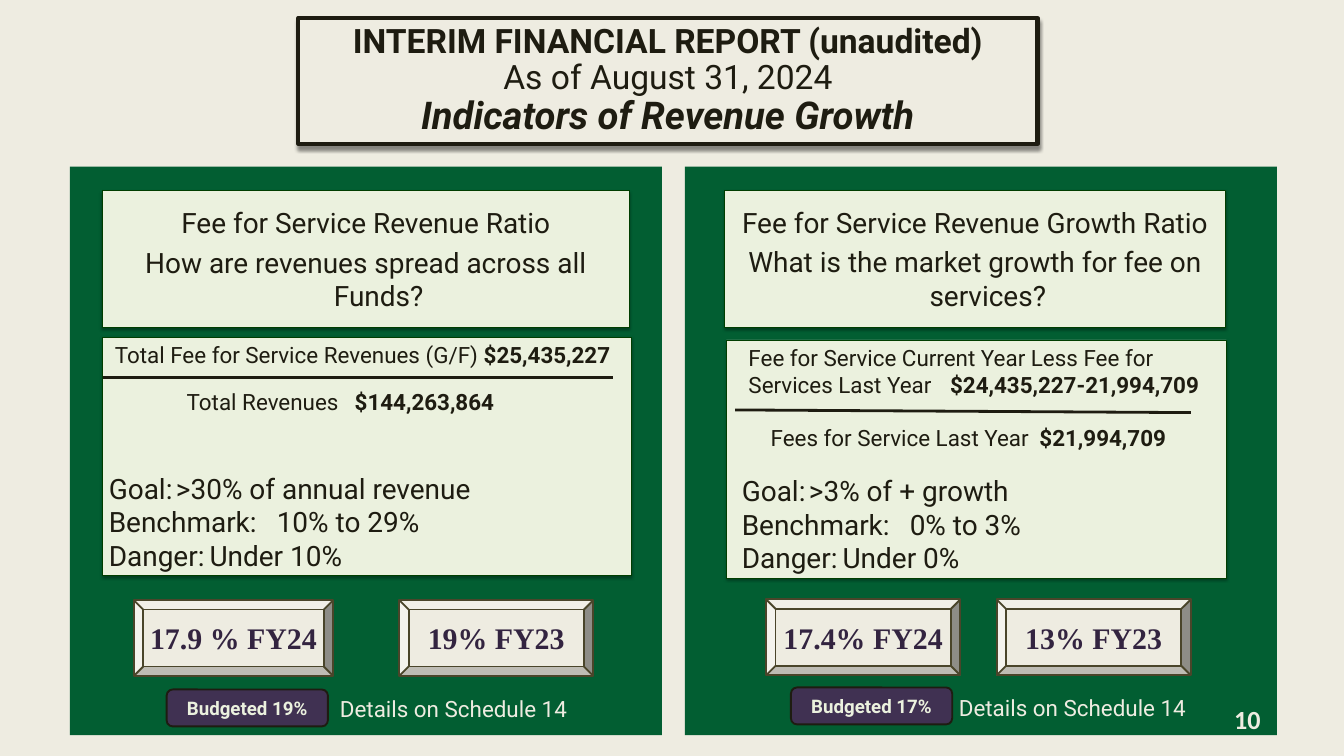
from lxml import etree
from pptx import Presentation
from pptx.dml.color import RGBColor
from pptx.enum.shapes import MSO_CONNECTOR, MSO_SHAPE
from pptx.enum.text import MSO_ANCHOR, MSO_AUTO_SIZE, PP_ALIGN
from pptx.oxml.ns import qn
from pptx.util import Inches, Pt

RECT = MSO_SHAPE.RECTANGLE
ROUND = MSO_SHAPE.ROUNDED_RECTANGLE
BEVEL = MSO_SHAPE.BEVEL
STRAIGHT = MSO_CONNECTOR.STRAIGHT
TOP, MIDDLE = MSO_ANCHOR.TOP, MSO_ANCHOR.MIDDLE
LEFT, CENTER, RIGHT = PP_ALIGN.LEFT, PP_ALIGN.CENTER, PP_ALIGN.RIGHT
NO_FIT = MSO_AUTO_SIZE.NONE

COLORS = {
    "paper": "EEECE1", "panel": "025E32", "card": "EBF1DE", "edge": "003E00",
    "ink": "1E1C11", "badge": "403152", "rim": "4A452A", "score": "332440",
    "shade": "000000",
}
BODY = {"name": "Roboto", "size": Pt(30), "bold": False}
SMALL = {**BODY, "size": Pt(24)}
STRONG = {**SMALL, "bold": True}
HEAD = {**BODY, "size": Pt(36)}
BADGE = {**BODY, "size": Pt(20), "bold": True}
SCORE = {"name": "Times New Roman", "size": Pt(32), "bold": True}
NUMBER = {"name": "Calibri", "size": Pt(28), "bold": True}


def color(key):
    return RGBColor.from_string(COLORS[key])


def place(shape, box):
    for name, value in zip(("left", "top", "width", "height"), box):
        setattr(shape, name, Inches(value))


def paint(shape, fill, line=None, width=0):
    shape.fill.solid()
    shape.fill.fore_color.rgb = color(fill)
    if line:
        shape.line.color.rgb = color(line)
        shape.line.width = Pt(width)
    else:
        shape.line.fill.background()
    shape.shadow.inherit = False


def shade(shape, alpha, blur, drop):
    effects = shape._element.spPr.find(qn("a:effectLst"))
    outer = etree.SubElement(
        effects, qn("a:outerShdw"), blurRad=str(Pt(blur)), dist=str(Pt(drop)),
        dir="5400000", algn="ctr", rotWithShape="0")
    tone = etree.SubElement(outer, qn("a:srgbClr"), val=COLORS["shade"])
    etree.SubElement(tone, qn("a:alpha"), val=str(alpha * 1000))


def indent(para, left=0, first=0, tab=0, side="l"):
    props = para._p.get_or_add_pPr()
    props.set("marL", str(Inches(left)))
    props.set("indent", str(Inches(first)))
    if tab:
        tabs = etree.SubElement(props, qn("a:tabLst"))
        etree.SubElement(tabs, qn("a:tab"), pos=str(Inches(tab)), algn=side)


def write(shape, rows, tone, align=LEFT, anchor=TOP, wrap=True, pad=None):
    frame = shape.text_frame
    frame.word_wrap = wrap
    frame.auto_size = NO_FIT
    frame.vertical_anchor = anchor
    if pad is not None:
        frame.margin_left = frame.margin_right = Inches(pad)
        frame.margin_top = frame.margin_bottom = Inches(pad)
    paras = []
    for index, row in enumerate(rows):
        para = frame.add_paragraph() if index else frame.paragraphs[0]
        para.alignment = align
        for text, style in row:
            run = para.add_run()
            run.text = text
            for name, value in style.items():
                setattr(run.font, name, value)
            run.font.color.rgb = color(tone)
        paras.append(para)
    return paras


def add_title(slide):
    title = slide.shapes.title
    place(title, (4.44, 0.27, 11, 1.87))
    paint(title, "paper", "ink", 4.5)
    shade(title, 43, 4, 4)
    rows = [
        [("INTERIM FINANCIAL REPORT (unaudited)", {**HEAD, "bold": True})],
        [("As of August 31, 2024", HEAD)],
        [("Indicators of Revenue Growth",
          {**HEAD, "size": Pt(41), "bold": True, "italic": True})],
    ]
    for para in write(title, rows, "ink", CENTER, MIDDLE, pad=0):
        para.line_spacing = 0.9
        para.space_before = Pt(0)


def add_panel(slide, left):
    panel = slide.shapes.add_shape(RECT, 0, 0, 0, 0)
    place(panel, (left, 2.48, 8.81, 8.46))
    paint(panel, "panel")


def add_card(slide, box):
    card = slide.shapes.add_shape(RECT, 0, 0, 0, 0)
    place(card, box)
    paint(card, "card", "edge", 0.75)
    shade(card, 35, 3.1, 1.8)
    return card


def add_topic(slide, box, lines):
    card = add_card(slide, box)
    rows = [[(line, BODY)] for line in lines]
    for para in write(card, rows, "ink", CENTER, MIDDLE):
        para.space_before = Pt(6)
        indent(para, 0.38, -0.38)


def add_text(slide, box, rows, tone, align=LEFT, pad=None):
    label = slide.shapes.add_textbox(0, 0, 0, 0)
    place(label, box)
    return write(label, rows, tone, align, pad=pad)


def add_ratio(slide, box, parts, gap, stops):
    rows = [[(text, SMALL), (value, STRONG)] for text, value in parts]
    paras = add_text(slide, box, rows, "ink")
    paras[1].space_before = Pt(gap)
    for para, stop in zip(paras, stops):
        indent(para, *stop)


def add_goals(slide, box, tab, goals):
    names = ("Goal:", "Benchmark:", "Danger:")
    rows = [[(f"{name}\t{goal}", BODY)] for name, goal in zip(names, goals)]
    for para in add_text(slide, box, rows, "ink"):
        indent(para, tab=tab)


def add_rule(slide, *ends):
    rule = slide.shapes.add_connector(STRAIGHT, *map(Inches, ends))
    rule.line.color.rgb = color("ink")
    rule.line.width = Pt(3)
    etree.SubElement(rule._element.spPr, qn("a:effectLst"))


def add_button(slide, kind, box, text, style, fill, line, tone):
    button = slide.shapes.add_shape(kind, 0, 0, 0, 0)
    place(button, box)
    paint(button, fill, line, 2)
    write(button, [[(text, style)]], tone, CENTER, MIDDLE, wrap=False)


def main():
    deck = Presentation()
    deck.slide_width, deck.slide_height = Inches(20), Inches(11.25)
    slide = deck.slides.add_slide(deck.slide_layouts[5])
    slide.background.fill.solid()
    slide.background.fill.fore_color.rgb = color("paper")

    add_title(slide)
    for left in (1.04, 10.19):
        add_panel(slide, left)

    add_topic(slide, (1.52, 2.84, 7.85, 2.03), (
        "Fee for Service Revenue Ratio",
        "How are revenues spread across all Funds?"))
    add_topic(slide, (10.78, 2.83, 7.46, 2.04), (
        "Fee for Service Revenue Growth Ratio",
        "What is the market growth for fee on services?"))

    add_card(slide, (1.53, 5.02, 7.86, 3.54))
    add_card(slide, (10.81, 5.06, 7.44, 3.54))
    add_ratio(slide, (1.53, 5.02, 7.86, 1.5), (
        ("Total Fee for Service Revenues (G/F) ", "$25,435,227"),
        ("Total Revenues\t", "$144,263,864"),
    ), 22, ((0.08,), (1.15, 0, 7.46, "r")))
    add_ratio(slide, (11.04, 5.07, 7.44, 1.72), (
        ("Fee for Service Current Year Less Fee for Services Last Year\t",
         "$24,435,227-21,994,709"),
        ("Fees for Service Last Year\t", "$21,994,709"),
    ), 28, ((0, 0, 2.88), (0.33, 0, 4.42)))
    add_rule(slide, 1.53, 5.62, 9.12, 5.62)
    add_rule(slide, 10.94, 6.1, 17.72, 6.14)

    add_goals(slide, (1.52, 6.96, 7.85, 1.62), 3.2,
              (">30% of annual revenue", "10% to 29%", "Under 10%"))
    add_goals(slide, (10.94, 7, 7.06, 1.62), 2.72,
              (">3% of + growth", "0% to 3%", "Under 0%"))

    for left, top, width, text in (
            (1.99, 8.93, 2.97, "17.9 % FY24"), (5.94, 8.93, 2.89, "19% FY23"),
            (11.4, 8.92, 2.89, "17.4% FY24"), (14.83, 8.92, 2.89, "13% FY23")):
        add_button(slide, BEVEL, (left, top, width, 1.13), text, SCORE,
                   "paper", "rim", "score")
    for left, top, text in ((2.48, 10.26, "Budgeted 19%"),
                            (11.77, 10.23, "Budgeted 17%")):
        add_button(slide, ROUND, (left, top, 2.4, 0.55), text, BADGE,
                   "badge", "ink", "card")
    for left, top in ((4.96, 10.3), (14.17, 10.28)):
        add_text(slide, (left, top, 3.85, 0.5),
                 [[("Details on Schedule 14", SMALL)]], "paper")
    add_text(slide, (18.34, 10.46, 0.42, 0.47), [[("10", NUMBER)]],
             "paper", RIGHT, 0)
    deck.save("out.pptx")


if __name__ == "__main__":
    main()
